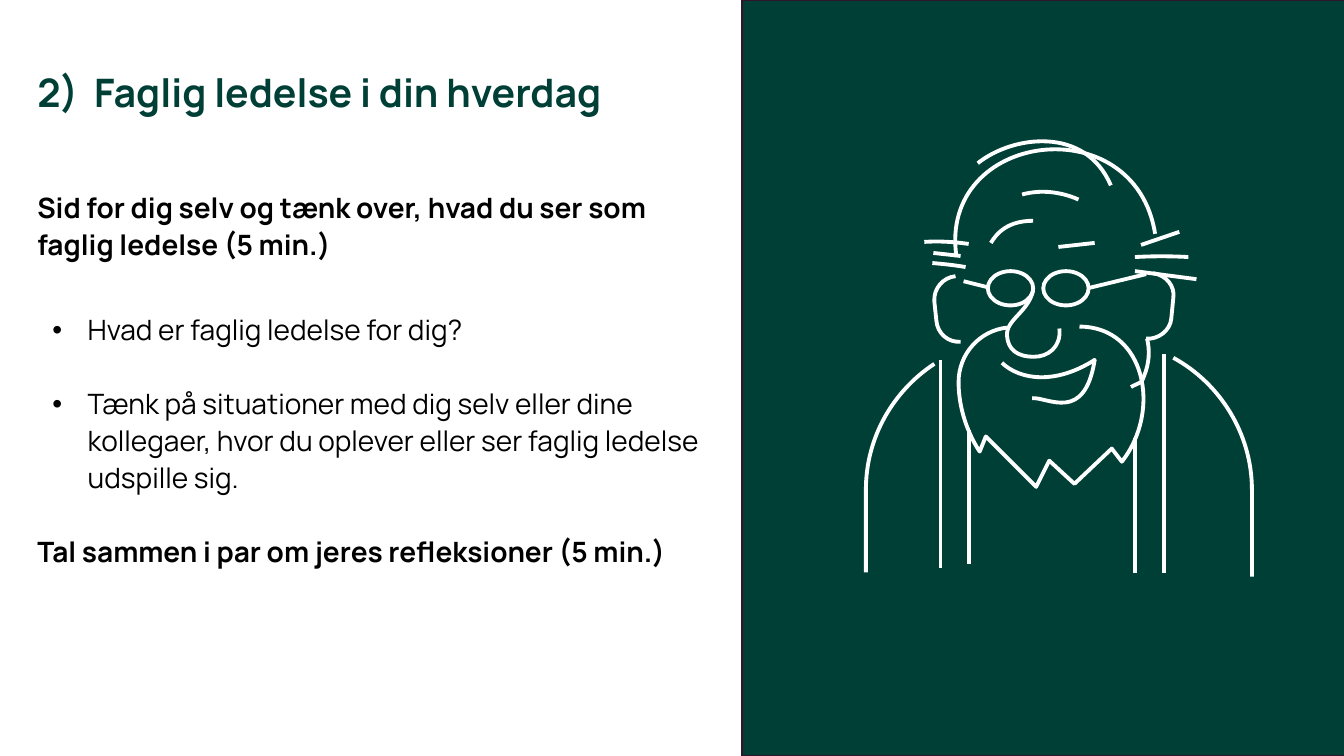
"""Build a Danish reflection slide with a line drawing of a bearded man."""
from dataclasses import dataclass

import lxml.etree
import pptx
import pptx.dml.color
import pptx.enum.shapes
import pptx.enum.text
import pptx.oxml.ns
import pptx.util

Pt = pptx.util.Pt
qn = pptx.oxml.ns.qn
GREEN = pptx.dml.color.RGBColor(0x00, 0x3F, 0x36)
PLUM = pptx.dml.color.RGBColor(0x32, 0x14, 0x2C)
WHITE = pptx.dml.color.RGBColor(0xFF, 0xFF, 0xFF)
BLACK = pptx.dml.color.RGBColor(0x00, 0x00, 0x00)
FONT = "Manrope"
GRID = 0.72
BOUND_STEPS = 20


@dataclass(frozen=True)
class Stroke:
    """An open outline in grid units: two numbers make a line, six a Bézier curve."""
    start: tuple[int, int]
    segments: tuple[tuple[int, ...], ...]


@dataclass(frozen=True)
class Line:
    """A straight line in grid units."""
    x1: int
    y1: int
    x2: int
    y2: int


@dataclass(frozen=True)
class Passage:
    """A paragraph of the body text."""
    text: str
    bold: bool = False
    bullet: bool = False
    space_before: float = 0


PASSAGES = (
    Passage("Sid for dig selv og tænk over, hvad du ser som faglig ledelse (5 min.)", bold=True),
    Passage("Hvad er faglig ledelse for dig?", bullet=True, space_before=34.3),
    Passage("Tænk på situationer med dig selv eller dine kollegaer, hvor du oplever "
            "eller ser faglig ledelse udspille sig.", bullet=True, space_before=26.4),
    Passage("Tal sammen i par om jeres refleksioner (5 min.)", bold=True, space_before=26.4),
)

EARS = (
    Stroke((1137, 336), ((1149, 337, 1161, 328, 1162, 316), (1164, 296),
                         (1166, 284, 1157, 273, 1144, 271))),
    Stroke((953, 339), ((941, 340, 930, 331, 929, 318), (927, 299),
                        (926, 286, 936, 275, 948, 274))),
)
HEAD = (
    Stroke((1146, 232), ((1126, 105, 930, 130, 949, 255),)),
    Stroke((970, 162), ((1005, 134, 1077, 125, 1102, 184),)),
    Stroke((1014, 193), ((1032, 188, 1052, 190, 1070, 198),)),
    Stroke((983, 241), ((989, 231, 1000, 219, 1025, 219),)),
)
BEARD = Stroke((1071, 324), (
    (1136, 324, 1153, 407, 1113, 458), (1103, 445), (1066, 480), (1041, 457),
    (1028, 483), (978, 433), (972, 448), (972, 448, 951, 419, 951, 379),
    (951, 351, 972, 328, 999, 325)))
NOSE = Stroke((1025, 288), ((1020, 310, 998, 317, 999, 333),
                            (1000, 347, 1009, 354, 1026, 354),
                            (1039, 354, 1053, 345, 1051, 326)))
MOUTH = Stroke((1024, 395), ((1040, 394, 1076, 420, 1086, 357),
                             (1047, 382, 1012, 377, 994, 360)))
JAW = Stroke((1138, 336), ((1141, 348, 1140, 361, 1135, 373),
                           (1134, 375, 1134, 377, 1132, 379),
                           (1129, 381, 1125, 382, 1122, 384)))
SHOULDERS = (
    Stroke((1164, 355), ((1210, 380, 1242, 430, 1242, 486), (1242, 572))),
    Stroke((859, 568), ((859, 486), (859, 434, 886, 388, 927, 361))),
)
CURVED_HAIR = (
    Stroke((1126, 255), ((1144, 254, 1161, 254, 1179, 255),)),
    Stroke((961, 242), ((947, 240, 932, 239, 917, 240),)),
    Stroke((953, 254), ((944, 253, 935, 252, 926, 251),)),
    Stroke((958, 265), ((947, 263, 936, 262, 925, 261),)),
)
STRAIGHT_HAIR = (Line(1132, 243, 1170, 230), Line(1126, 269, 1187, 277))
EYEBROW = Line(1050, 245, 1086, 241)
GLASSES_ARMS = (Line(1079, 286, 1137, 272), Line(956, 279, 980, 285))
BRACES = (Line(933, 357, 933, 564), Line(961, 427, 961, 560),
          Line(1126, 435, 1126, 568), Line(1155, 351, 1155, 568))
LENS_LEFTS = (980, 1035)


def grid(value: float) -> int:
    return Pt(value * GRID)


def extent(stroke: Stroke, axis: int) -> tuple[int, int]:
    values = [stroke.start[axis]]
    for segment in stroke.segments:
        a, d = values[-1], segment[-2:][axis]
        if len(segment) == 6:
            b, c = segment[axis], segment[axis + 2]
            for t in (step / BOUND_STEPS for step in range(1, BOUND_STEPS)):
                u = 1 - t
                values.append(a * u ** 3 + 3 * b * t * u ** 2 + 3 * c * t ** 2 * u + d * t ** 3)
        values.append(d)
    return grid(min(values)), grid(max(values))


def ink(outline) -> None:
    outline.line.color.rgb = WHITE
    outline.line.width = Pt(2.75)


def draw_stroke(drawing, stroke: Stroke) -> None:
    builder = drawing.shapes.build_freeform(*map(grid, stroke.start))
    builder.add_line_segments([tuple(map(grid, s[-2:])) for s in stroke.segments], close=False)
    outline = builder.convert_to_shape()
    (left, right), (top, bottom) = extent(stroke, 0), extent(stroke, 1)
    outline.left, outline.top = left, top
    outline.width, outline.height = right - left, bottom - top
    route = outline._element.xpath(".//a:path")[0]
    route.set("w", str(right - left))
    route.set("h", str(bottom - top))
    for child in list(route):
        route.remove(child)
    for segment in (stroke.start, *stroke.segments):
        tag = "a:moveTo" if not len(route) else "a:lnTo" if len(segment) == 2 else "a:cubicBezTo"
        move = lxml.etree.SubElement(route, qn(tag))
        for x, y in zip(segment[::2], segment[1::2]):
            lxml.etree.SubElement(move, qn("a:pt"), x=str(grid(x) - left), y=str(grid(y) - top))
    outline.fill.background()
    outline.shadow.inherit = False
    ink(outline)


def draw_line(drawing, line: Line) -> None:
    straight = drawing.shapes.add_connector(
        pptx.enum.shapes.MSO_CONNECTOR.STRAIGHT,
        grid(line.x1), grid(line.y1), grid(line.x2), grid(line.y2))
    ink(straight)
    lxml.etree.SubElement(straight._element.spPr, qn("a:effectLst"))


def draw_lens(drawing, left: int) -> None:
    lens = drawing.shapes.add_shape(pptx.enum.shapes.MSO_SHAPE.OVAL,
                                    grid(left), grid(269), grid(45), grid(34))
    lens.fill.background()
    lens.shadow.inherit = False
    ink(lens)


def write(paragraph, text: str, *, size: float, color, bold: bool = False,
          margin: float = 0, indent: float = 0, space_before: float = 0,
          bullet: tuple[str, dict[str, str]] = ("a:buNone", {})) -> None:
    paragraph.alignment = pptx.enum.text.PP_ALIGN.LEFT
    paragraph.line_spacing = 1.1
    paragraph.space_before = Pt(space_before)
    run = paragraph.add_run()
    run.text = text
    run.font.name, run.font.size, run.font.bold = FONT, Pt(size), bold
    run.font.color.rgb = color
    properties = paragraph._p.get_or_add_pPr()
    properties.set("marL", str(Pt(margin)))
    properties.set("indent", str(Pt(indent)))
    tag, attributes = bullet
    if tag != "a:buNone":
        bullet_color = lxml.etree.SubElement(properties, qn("a:buClr"))
        lxml.etree.SubElement(bullet_color, qn("a:srgbClr"), val=str(color))
    lxml.etree.SubElement(properties, qn(tag), attributes)


def place(placeholder, left: float, top: float, width: float, height: float):
    placeholder.left, placeholder.top = Pt(left), Pt(top)
    placeholder.width, placeholder.height = Pt(width), Pt(height)
    frame = placeholder.text_frame
    frame.margin_left = frame.margin_right = frame.margin_top = frame.margin_bottom = 0
    frame.vertical_anchor = pptx.enum.text.MSO_ANCHOR.TOP
    frame.auto_size = pptx.enum.text.MSO_AUTO_SIZE.NONE
    return frame


def main() -> None:
    deck = pptx.Presentation()
    deck.slide_width, deck.slide_height = Pt(960), Pt(540)
    slide = deck.slides.add_slide(deck.slide_layouts[1])
    heading = place(slide.shapes.title, 26.64, 45.36, 464.4, 66.24)
    write(heading.paragraphs[0], "Faglig ledelse i din hverdag", size=28, color=GREEN, bold=True,
          margin=40.5, indent=-40.5,
          bullet=("a:buAutoNum", {"type": "arabicParenR", "startAt": "2"}))
    exercise = place(slide.placeholders[1], 26.64, 133.92, 477.36, 354.24)
    listed = {"margin": 36, "indent": -25.2, "bullet": ("a:buChar", {"char": "•"})}
    for index, passage in enumerate(PASSAGES):
        paragraph = exercise.add_paragraph() if index else exercise.paragraphs[0]
        write(paragraph, passage.text, size=20, color=BLACK, bold=passage.bold,
              space_before=passage.space_before, **(listed if passage.bullet else {}))

    panel = slide.shapes.add_shape(pptx.enum.shapes.MSO_SHAPE.RECTANGLE,
                                   Pt(530), Pt(0), Pt(434.9), Pt(540))
    panel.shadow.inherit = False
    panel.fill.solid()
    panel.fill.fore_color.rgb = GREEN
    panel.line.color.rgb = PLUM
    panel.line.width = Pt(2)

    man = slide.shapes.add_group_shape()
    for stroke in (*EARS, *HEAD, BEARD, NOSE, MOUTH, JAW, *SHOULDERS, *CURVED_HAIR):
        draw_stroke(man, stroke)
    for line in (*STRAIGHT_HAIR, EYEBROW, *GLASSES_ARMS, *BRACES):
        draw_line(man, line)
    for left in LENS_LEFTS:
        draw_lens(man, left)
    deck.save("out.pptx")


if __name__ == "__main__":
    main()
